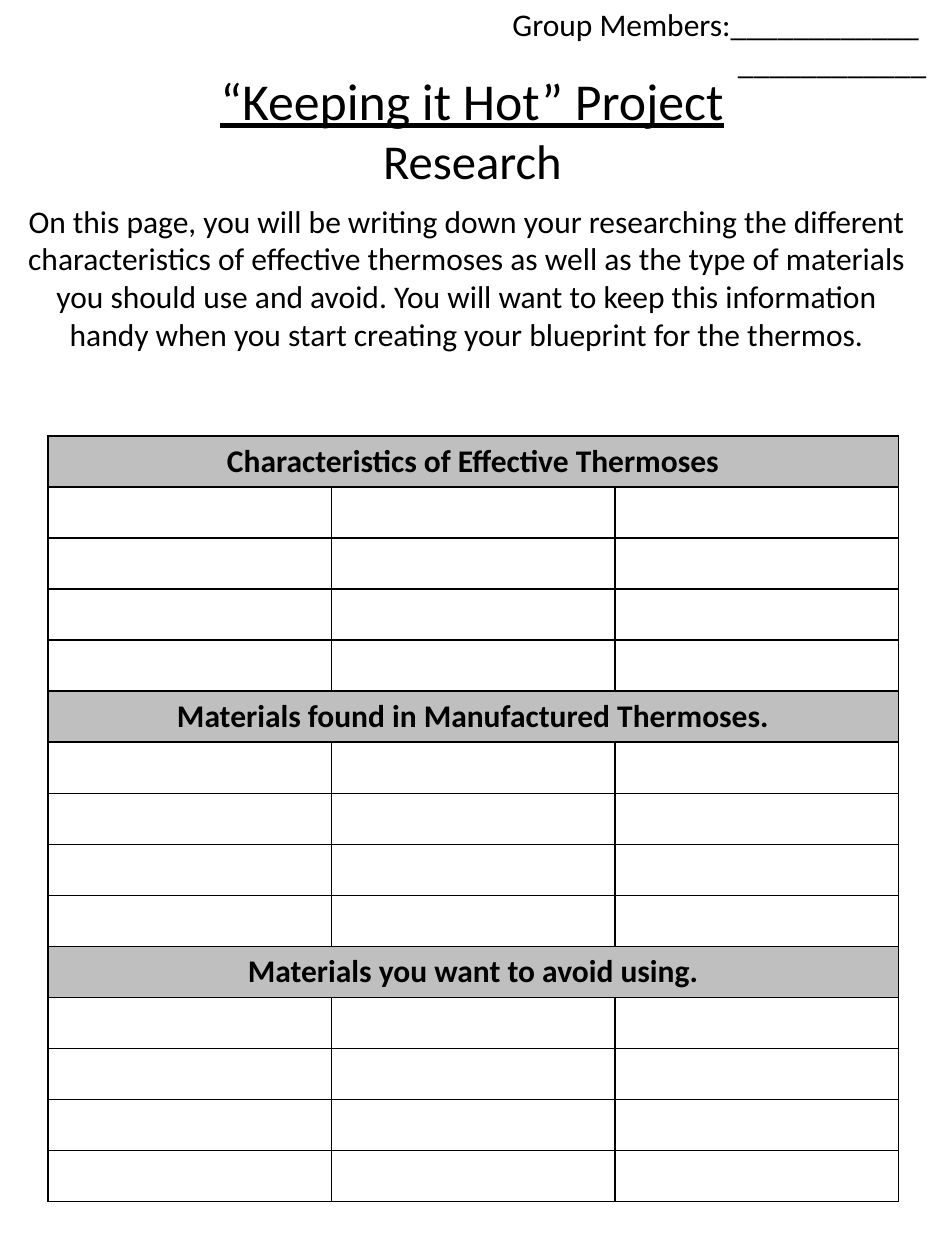
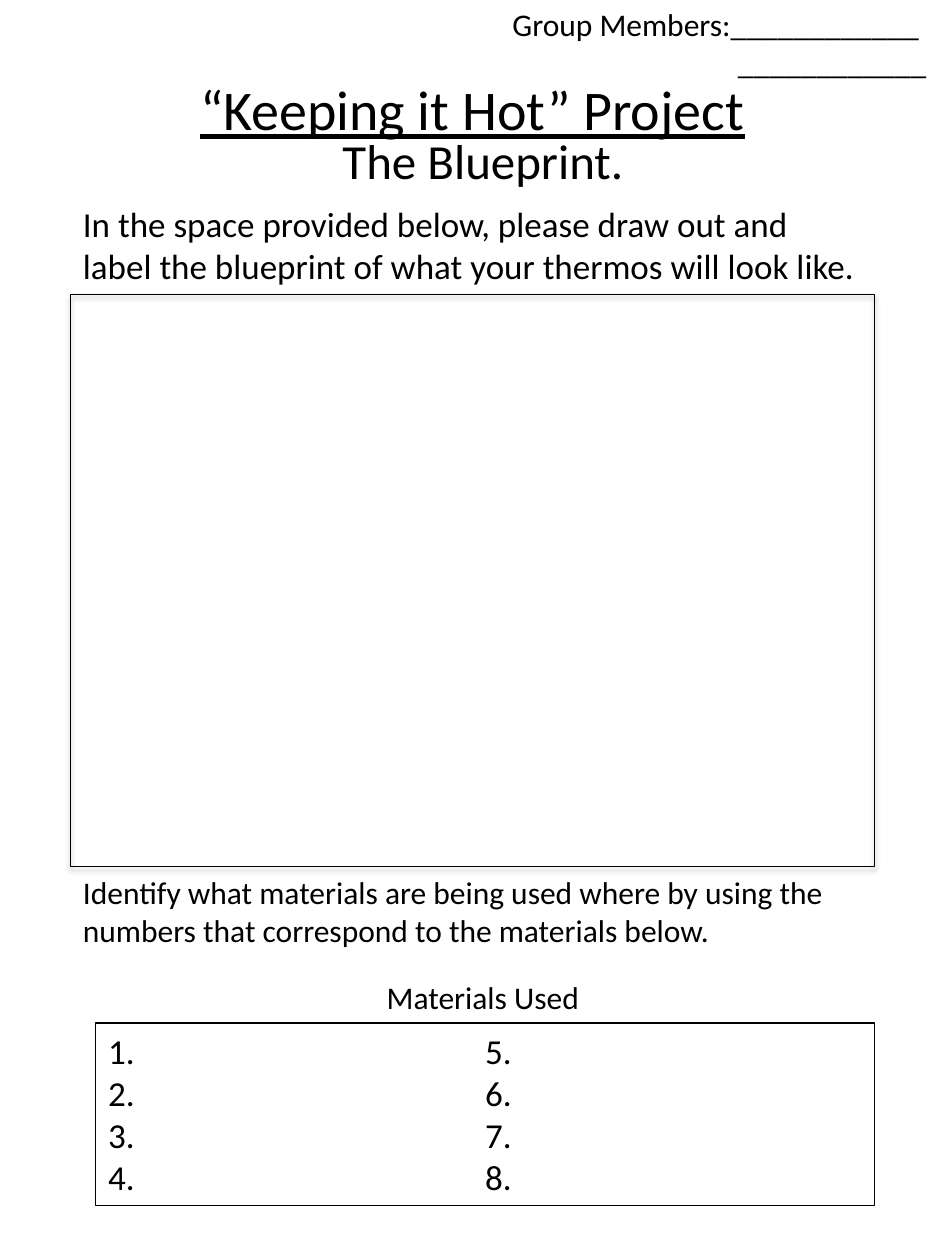
from lxml.etree import SubElement
from pptx import Presentation
from pptx.dml.color import RGBColor
from pptx.enum.shapes import MSO_SHAPE
from pptx.enum.text import MSO_ANCHOR, MSO_AUTO_SIZE, PP_ALIGN
from pptx.oxml import parse_xml
from pptx.oxml.ns import nsdecls, qn
from pptx.util import Inches, Pt

COLORS = {"ink": "000000", "paper": "FFFFFF", "band": "BFBFBF"}
FONT = "Calibri"
PROJECT = "“Keeping it Hot” Project"
MEMBERS = ["Group Members:____________ ", "____________"]
SECTIONS = [
    "Characteristics of Effective Thermoses",
    "Materials found in Manufactured Thermoses.",
    "Materials you want to avoid using.",
]
BLANK_ROWS, COLUMNS = 4, 3
PAGE_LEFT, PAGE_WIDTH = 0.56, 6.38


def rgb(name):
    """Return the named colour."""
    return RGBColor.from_string(COLORS[name])


def apply(target, formats):
    """Set each format value on the target."""
    for name, value in formats.items():
        setattr(target, name, value)


def write(tf, lines, align=PP_ALIGN.LEFT, **formats):
    """Write one paragraph per line; a line is text or a (text, formats) pair."""
    for i, line in enumerate(lines):
        text, extra = line if isinstance(line, tuple) else (line, {})
        p = tf.paragraphs[0] if i == 0 else tf.add_paragraph()
        p.alignment = align
        r = p.add_run()
        r.text = text
        apply(r.font, {"name": FONT, **formats, **extra})
        r.font.color.rgb = rgb("ink")


def add_text(s, box, lines, size, align=PP_ALIGN.LEFT, wrap=True):
    """Add a text box that grows with its text."""
    tf = s.shapes.add_textbox(*map(Inches, box)).text_frame
    apply(tf, {"word_wrap": wrap, "auto_size": MSO_AUTO_SIZE.SHAPE_TO_FIT_TEXT})
    write(tf, lines, align, size=Pt(size))


def add_page(prs, title_box, title_lines):
    """Add a titled slide with the group members lines."""
    s = prs.slides.add_slide(prs.slide_layouts[5])
    sp = s.shapes.title
    apply(sp, dict(zip(("left", "top", "width", "height"), map(Inches, title_box))))
    apply(sp.text_frame, {"word_wrap": True, "auto_size": MSO_AUTO_SIZE.NONE,
                          "vertical_anchor": MSO_ANCHOR.MIDDLE})
    write(sp.text_frame, title_lines, PP_ALIGN.CENTER)
    add_text(s, (3.91, -0.01, 3.54, 0.71), MEMBERS, 18, PP_ALIGN.RIGHT, wrap=False)
    return s


def style_cell(cell, fill):
    """Fill a cell and draw its four borders."""
    tcPr = cell._tc.get_or_add_tcPr()
    for side in ("lnL", "lnR", "lnT", "lnB"):
        ln = SubElement(tcPr, qn(f"a:{side}"), w=str(Pt(1)))
        SubElement(SubElement(ln, qn("a:solidFill")), qn("a:srgbClr"), val=COLORS["ink"])
    cell.fill.solid()
    cell.fill.fore_color.rgb = rgb(fill)


def add_research_table(s, box):
    """Add the table with a heading band above each set of blank rows."""
    step = BLANK_ROWS + 1
    count = step * len(SECTIONS)
    table = s.shapes.add_table(count, COLUMNS, *map(Inches, box)).table
    for i, row in enumerate(table.rows):
        row.height = Inches(box[3] / count)
        is_heading = i % step == 0
        for cell in row.cells:
            style_cell(cell, "band" if is_heading else "paper")
        if is_heading:
            head = table.cell(i, 0)
            head.merge(table.cell(i, COLUMNS - 1))
            write(head.text_frame, [SECTIONS[i // step]], PP_ALIGN.CENTER,
                  size=Pt(18), bold=True)


def add_frame(s, box):
    """Add an unfilled rectangle with a thin outline."""
    sp = s.shapes.add_shape(MSO_SHAPE.RECTANGLE, *map(Inches, box))
    sp.shadow.inherit = False
    sp.fill.background()
    sp.line.color.rgb = rgb("ink")
    sp.line.width = Pt(0.75)
    return sp


def add_drawing_area(s, box):
    """Add the blueprint frame with a soft shadow."""
    effects = add_frame(s, box)._element.spPr.find(qn("a:effectLst"))
    effects.append(parse_xml(
        f'<a:outerShdw {nsdecls("a")} blurRad="{Pt(3.1)}" dist="{Pt(1.8)}" dir="5400000" '
        f'rotWithShape="0"><a:srgbClr val="{COLORS["ink"]}"><a:alpha val="35000"/>'
        '</a:srgbClr></a:outerShdw>'))


def add_materials_list(s, box):
    """Add the numbered list in two columns."""
    tf = add_frame(s, box).text_frame
    apply(tf, {"word_wrap": True, "auto_size": MSO_AUTO_SIZE.SHAPE_TO_FIT_TEXT,
               "vertical_anchor": MSO_ANCHOR.TOP})
    tf._txBody.bodyPr.set("numCol", "2")
    write(tf, [f"{n}." for n in range(1, 9)], size=Pt(20))


def research_page(prs):
    """Build the research page."""
    s = add_page(prs, (PAGE_LEFT, 0.57, PAGE_WIDTH, 0.91), [
        (PROJECT, {"size": Pt(29.6), "underline": True}),
        ("Research", {"size": Pt(27.8)}),
    ])
    add_text(s, (0.12, 1.55, 7.17, 1.62), [
        "On this page, you will be writing down your researching the different "
        "characteristics of effective thermoses as well as the type of materials you "
        "should use and avoid. You will want to keep this information handy when you "
        "start creating your blueprint for the thermos."], 18, PP_ALIGN.CENTER)
    add_research_table(s, (0.38, 3.46, 6.75, 6.08))


def blueprint_page(prs):
    """Build the blueprint page."""
    s = add_page(prs, (PAGE_LEFT, 0.54, PAGE_WIDTH, 0.64),
                 [(PROJECT, {"size": Pt(32), "underline": True})])
    add_text(s, (2.62, 0.99, 2.46, 0.57), ["The Blueprint."], 28, wrap=False)
    add_text(s, (PAGE_LEFT, 1.56, PAGE_WIDTH, 0.77), [
        "In the space provided below, please draw out and label the blueprint of what "
        "your thermos will look like."], 20)
    add_drawing_area(s, (PAGE_LEFT, 2.34, PAGE_WIDTH, 4.54))
    add_text(s, (PAGE_LEFT, 6.88, PAGE_WIDTH, 0.71), [
        "Identify what materials are being used where by using the numbers that "
        "correspond to the materials below."], 18)
    add_text(s, (2.97, 7.71, 1.75, 0.4), ["Materials Used"], 18, wrap=False)
    add_materials_list(s, (0.76, 8.12, 6.18, 1.45))


def main():
    """Build and save the two pages."""
    prs = Presentation()
    apply(prs, {"slide_width": Inches(7.5), "slide_height": Inches(10)})
    research_page(prs)
    blueprint_page(prs)
    prs.save("out.pptx")


if __name__ == "__main__":
    main()
